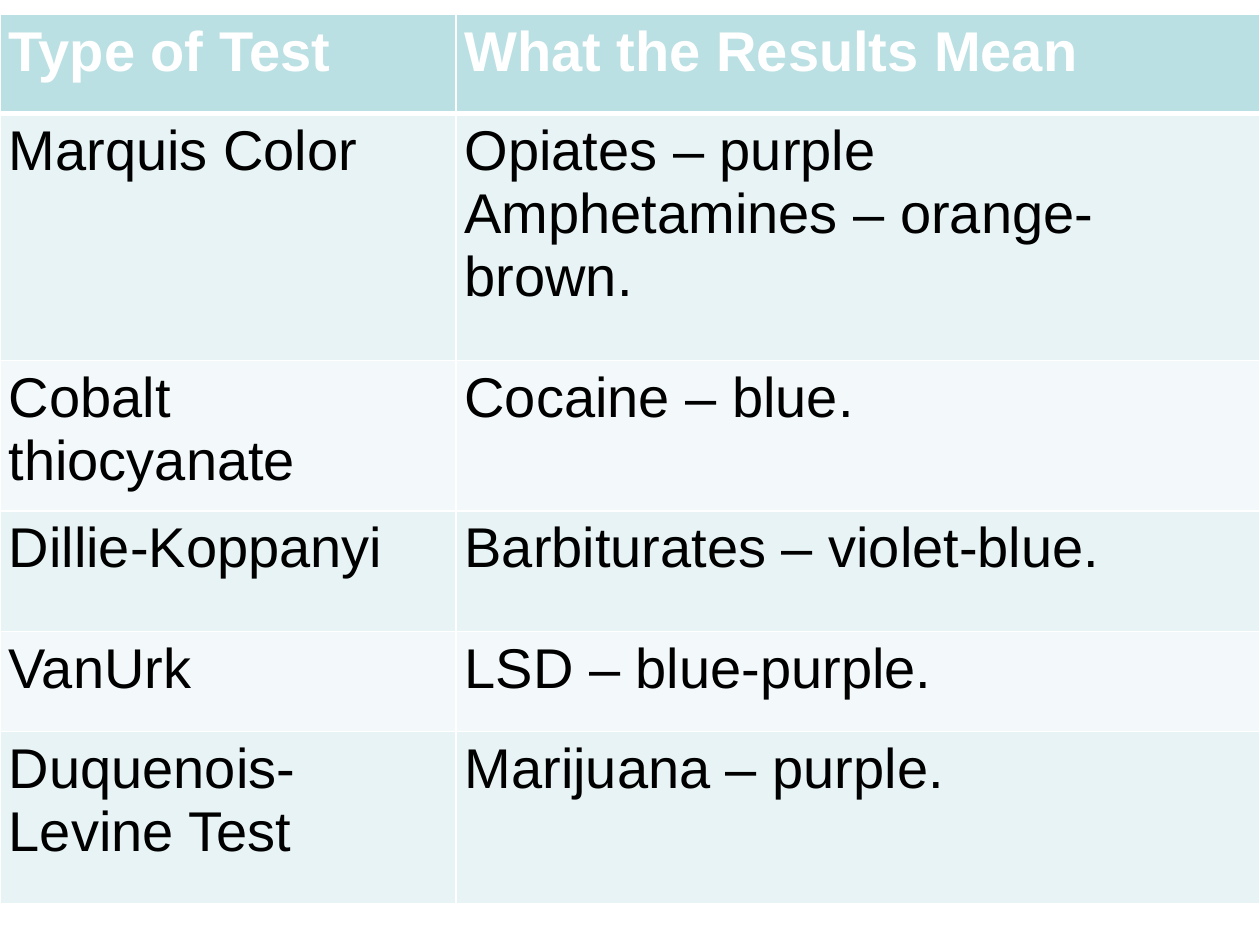
from lxml import etree
from pptx import Presentation
from pptx.dml.color import RGBColor
from pptx.oxml.ns import qn
from pptx.util import Pt

THEME = {
    "font": "Arial", "size": 32,
    "header_text": "FFFFFF", "body_text": "000000",
    "header_fill": "BBE0E3", "bands": ("E7F3F4", "F3F9FA"),
    "border": "FFFFFF", "line": 1, "header_line": 3,
}
ROWS = [
    # height, test, results (one paragraph each)
    (57, "Type of Test", ["What the Results Mean"]),
    (141, "Marquis Color", ["Opiates – purple", "Amphetamines – orange-brown."]),
    (86, "Cobalt thiocyanate", ["Cocaine – blue."]),
    (69, "Dillie-Koppanyi", ["Barbiturates – violet-blue."]),
    (57, "VanUrk", ["LSD – blue-purple."]),
    (98.5, "Duquenois-Levine Test", ["Marijuana – purple."]),
]
COLUMNS = (260.5, 459.5)
TOP = 8
MARGIN_X, MARGIN_Y = 5, 3.6


def write(tf, lines, *, color, bold=False):
    for i, line in enumerate(lines):
        p = tf.paragraphs[0] if i == 0 else tf.add_paragraph()
        r = p.add_run()
        r.text = line
        r.font.name = THEME["font"]
        r.font.size = Pt(THEME["size"])
        r.font.bold = bold
        r.font.color.rgb = RGBColor.from_string(color)


def set_borders(cell, bottom):
    tcPr = cell._tc.get_or_add_tcPr()
    widths = {"L": THEME["line"], "R": THEME["line"], "T": THEME["line"], "B": bottom}
    for side, width in widths.items():
        ln = etree.SubElement(tcPr, qn(f"a:ln{side}"), w=str(Pt(width)))
        fill = etree.SubElement(ln, qn("a:solidFill"))
        etree.SubElement(fill, qn("a:srgbClr"), val=THEME["border"])


def format_cell(cell, fill, bottom):
    cell.margin_left = cell.margin_right = Pt(MARGIN_X)
    cell.margin_top = cell.margin_bottom = Pt(MARGIN_Y)
    set_borders(cell, bottom)
    cell.fill.solid()
    cell.fill.fore_color.rgb = RGBColor.from_string(fill)


def main():
    prs = Presentation()
    prs.slide_width, prs.slide_height = Pt(720), Pt(540)
    s = prs.slides.add_slide(prs.slide_layouts[6])
    height = sum(row[0] for row in ROWS)
    table = s.shapes.add_table(len(ROWS), len(COLUMNS), 0, Pt(TOP),
                               Pt(sum(COLUMNS)), Pt(height)).table
    for column, width in zip(table.columns, COLUMNS):
        column.width = Pt(width)

    for i, (row_height, test, results) in enumerate(ROWS):
        table.rows[i].height = Pt(row_height)
        header = i == 0
        fill = THEME["header_fill"] if header else THEME["bands"][(i - 1) % 2]
        bottom = THEME["header_line"] if header else THEME["line"]
        color = THEME["header_text"] if header else THEME["body_text"]
        for j, lines in enumerate(([test], results)):
            cell = table.cell(i, j)
            format_cell(cell, fill, bottom)
            write(cell.text_frame, lines, color=color, bold=header)

    prs.save("out.pptx")


if __name__ == "__main__":
    main()
